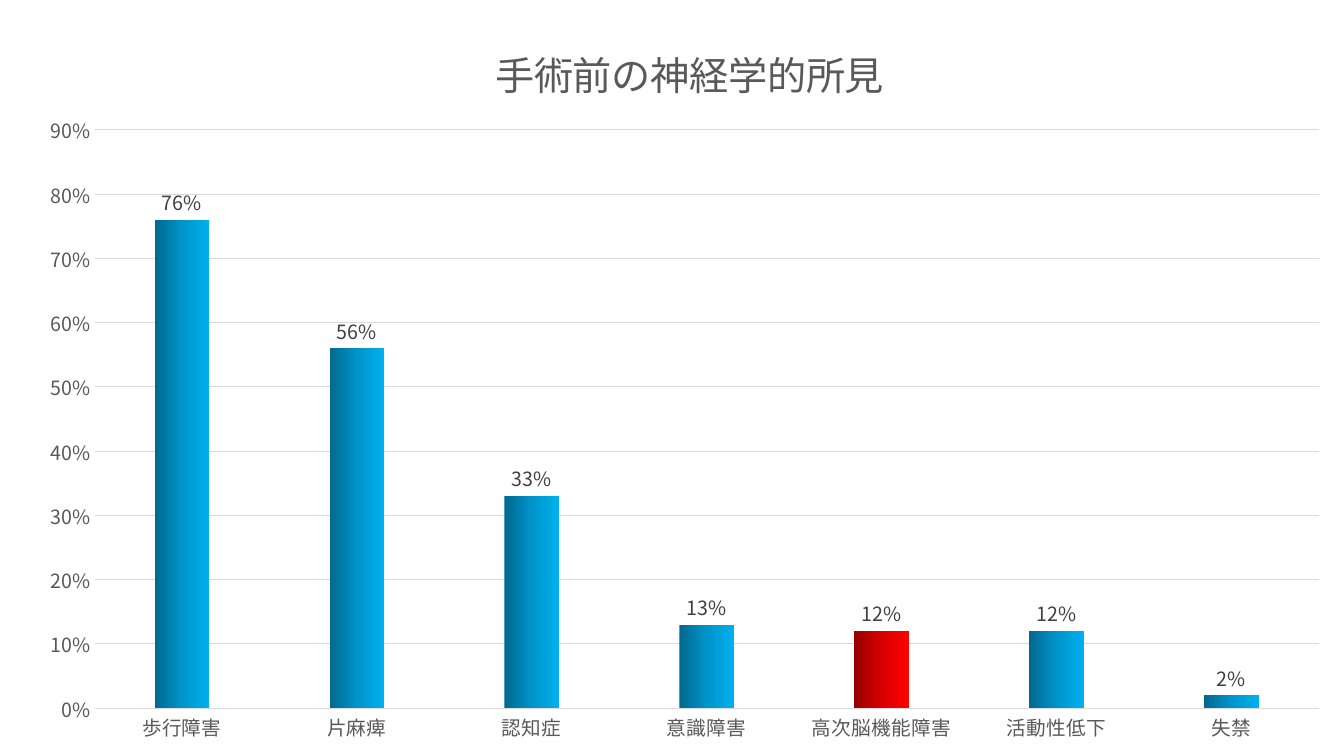
from copy import deepcopy

from lxml.etree import SubElement
from pptx import Presentation
from pptx.chart.data import CategoryChartData
from pptx.dml.color import RGBColor
from pptx.enum.chart import XL_CHART_TYPE as ChartType
from pptx.enum.chart import XL_LABEL_POSITION as LabelPosition
from pptx.enum.chart import XL_TICK_MARK as TickMark
from pptx.oxml.ns import qn
from pptx.util import Inches, Pt

FONT = "Noto Sans CJK JP"
TEXT_GREY = RGBColor(0x59, 0x59, 0x59)
LABEL_GREY = RGBColor(0x40, 0x40, 0x40)
RULE_GREY = RGBColor(0xD9, 0xD9, 0xD9)
BLUES = (RGBColor(0x00, 0x68, 0x8E), RGBColor(0x00, 0x94, 0xCA), RGBColor(0x00, 0xB0, 0xF0))
REDS = (RGBColor(0x97, 0x00, 0x00), RGBColor(0xD7, 0x00, 0x00), RGBColor(0xFF, 0x00, 0x00))

TITLE = "手術前の神経学的所見"
FINDINGS = {
    "歩行障害": 0.76,
    "片麻痺": 0.56,
    "認知症": 0.33,
    "意識障害": 0.13,
    "高次脳機能障害": 0.12,
    "活動性低下": 0.12,
    "失禁": 0.02,
}
HIGHLIGHT = "高次脳機能障害"


def style_font(font, size, color):
    font.name, font.size, font.bold = FONT, Pt(size), False
    font.color.rgb = color
    font._element.get_or_add_latin().addnext(
        SubElement(font._element, qn("a:ea"), typeface=FONT))


def write_text(frame, text, size=14, color=TEXT_GREY):
    run = frame.paragraphs[0].add_run()
    run.text = text
    style_font(run.font, size, color)


def shade(fill, colors):
    """Fill from left to right through evenly spaced colours."""
    fill.gradient()
    fill.gradient_angle = 0
    stop_list = fill.gradient_stops._gsLst
    stop_list.insert(1, deepcopy(stop_list[0]))
    for i, (stop, color) in enumerate(zip(fill.gradient_stops, colors)):
        stop.position = i / (len(colors) - 1)
        stop.color.rgb = color


def place(parent, **shares):
    """Fix a chart part at shares of the chart's size."""
    for old in parent.findall(qn("c:layout")):
        parent.remove(old)
    layout = SubElement(parent, qn("c:layout"))
    manual = SubElement(layout, qn("c:manualLayout"))
    if "w" in shares:
        SubElement(manual, qn("c:layoutTarget"), val="inner")
    for mode in ("xMode", "yMode"):
        SubElement(manual, qn(f"c:{mode}"), val="edge")
    for key, share in shares.items():
        SubElement(manual, qn(f"c:{key}"), val=str(share))
    return layout


class FindingsSlide:
    def __init__(self, width=13.33, height=7.5):
        self.deck = Presentation()
        self.deck.slide_width, self.deck.slide_height = Inches(width), Inches(height)
        self.slide = self.deck.slides.add_slide(self.deck.slide_layouts[6])

    def add_columns(self, values, x, y, w, h):
        data = CategoryChartData(number_format="0%")
        data.categories = list(values)
        data.add_series("Series 1", list(values.values()))
        width, height = self.deck.slide_width, self.deck.slide_height
        chart = self.slide.shapes.add_chart(
            ChartType.COLUMN_CLUSTERED, int(x * width), int(y * height),
            int(w * width), int(h * height), data).chart
        chart.has_legend = False
        plot = chart.plots[0]
        plot.gap_width, plot.overlap, plot.vary_by_categories = 219, -27, False
        plot_area = chart._chartSpace.chart.plotArea
        plot_area.insert(0, place(plot_area, x=0.054, y=0.172, w=0.927, h=0.765))
        return chart

    def add_title(self, chart, text):
        chart.has_title = True
        title = chart.chart_title
        write_text(title.text_frame, text, size=28)
        title.include_in_layout = False
        layout = place(title._element, x=0.352, y=0.044)
        title._element.find(qn("c:tx")).addnext(layout)

    def style_axes(self, chart, top, step):
        categories, shares = chart.category_axis, chart.value_axis
        for axis in (categories, shares):
            axis.major_tick_mark = axis.minor_tick_mark = TickMark.NONE
            style_font(axis.tick_labels.font, 14, TEXT_GREY)
        shares.minimum_scale, shares.maximum_scale, shares.major_unit = 0, top, step
        shares.tick_labels.number_format = "0%"
        shares.tick_labels.number_format_is_linked = False
        shares.format.line.fill.background()
        for rule in (categories.format.line, shares.major_gridlines.format.line):
            rule.color.rgb, rule.width = RULE_GREY, Pt(0.75)

    def style_bars(self, chart, highlight):
        bars = chart.plots[0].series[0]
        bars.invert_if_negative = False
        shade(bars.format.fill, BLUES)
        shade(bars.points[highlight].format.fill, REDS)
        labels = bars.data_labels
        labels.show_value, labels.position = True, LabelPosition.OUTSIDE_END
        labels.number_format, labels.number_format_is_linked = "0%", False
        style_font(labels.font, 14, LABEL_GREY)


def main():
    page = FindingsSlide()

    # Column chart across the slide
    findings = page.add_columns(FINDINGS, x=0.0173, y=0, w=0.9827, h=1)

    # Heading, scales and bars
    page.add_title(findings, TITLE)
    page.style_axes(findings, top=0.9, step=0.1)
    page.style_bars(findings, highlight=list(FINDINGS).index(HIGHLIGHT))

    page.deck.save("out.pptx")


if __name__ == "__main__":
    main()
